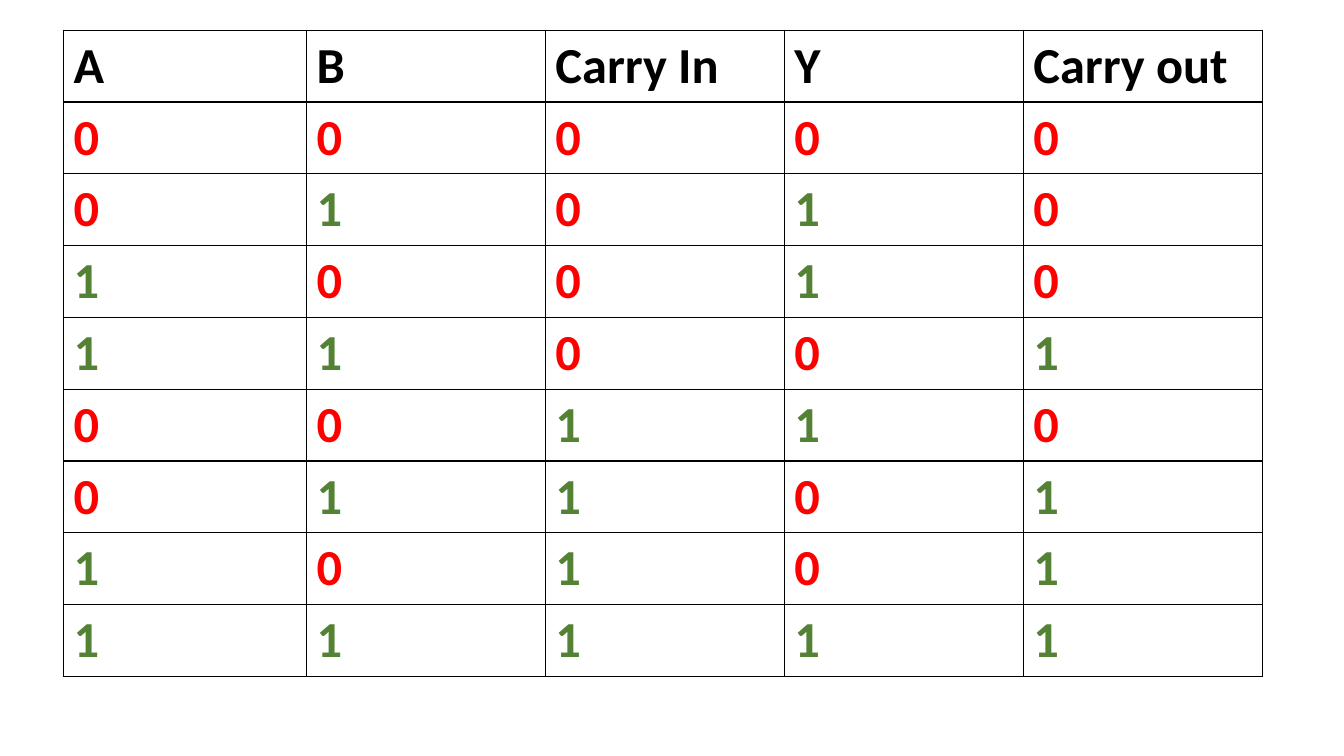
from itertools import product

from lxml.etree import SubElement
from pptx import Presentation
from pptx.dml.color import RGBColor
from pptx.oxml.ns import qn
from pptx.util import Inches, Pt

BLACK, RED, GREEN = "000000", "FF0000", "548235"
HEADERS = ["A", "B", "Carry In", "Y", "Carry out"]
COL_WIDTHS = [2.41, 2.37, 2.37, 2.37, 2.37]
ROW_HEIGHT = 0.71


def rgb(color):
    """Turn a hex string into a colour."""
    return RGBColor.from_string(color)


def adder_rows():
    """Return the truth table of a full adder as rows of text."""
    rows = []
    for carry, a, b in product((0, 1), repeat=3):
        total = a + b + carry
        rows.append([str(bit) for bit in (a, b, carry, total % 2, total // 2)])
    return rows


def add_borders(cell):
    """Draw a thin black line on each side of a cell."""
    props = cell._tc.get_or_add_tcPr()
    for i, side in enumerate(("a:lnL", "a:lnR", "a:lnT", "a:lnB")):
        line = props.makeelement(qn(side), {"w": str(Pt(1))})
        fill = SubElement(line, qn("a:solidFill"))
        SubElement(fill, qn("a:srgbClr"), val=BLACK)
        props.insert(i, line)


def fill_cell(cell, text, color):
    """Write bold text into a bordered cell without fill."""
    cell.fill.background()
    add_borders(cell)
    r = cell.text_frame.paragraphs[0].add_run()
    r.text = text
    r.font.name = "Calibri"
    r.font.size = Pt(36)
    r.font.bold = True
    r.font.color.rgb = rgb(color)


def add_truth_table(s, left, top):
    """Place the truth table with its top left corner at the given point."""
    rows = [HEADERS] + adder_rows()
    frame = s.shapes.add_table(
        len(rows), len(HEADERS), Inches(left), Inches(top),
        Inches(sum(COL_WIDTHS)), Inches(ROW_HEIGHT * len(rows)))
    table = frame.table
    table.first_row = table.horz_banding = False
    for column, width in zip(table.columns, COL_WIDTHS):
        column.width = Inches(width)
    colors = {"0": RED, "1": GREEN}
    for i, row in enumerate(rows):
        table.rows[i].height = Inches(ROW_HEIGHT)
        for j, text in enumerate(row):
            fill_cell(table.cell(i, j), text, colors.get(text, BLACK))


def main():
    """Build and save the slide."""
    prs = Presentation()
    prs.slide_width, prs.slide_height = Inches(13.33), Inches(7.5)
    s = prs.slides.add_slide(prs.slide_layouts[6])
    add_truth_table(s, 0.63, 0.3)
    prs.save("out.pptx")


if __name__ == "__main__":
    main()
